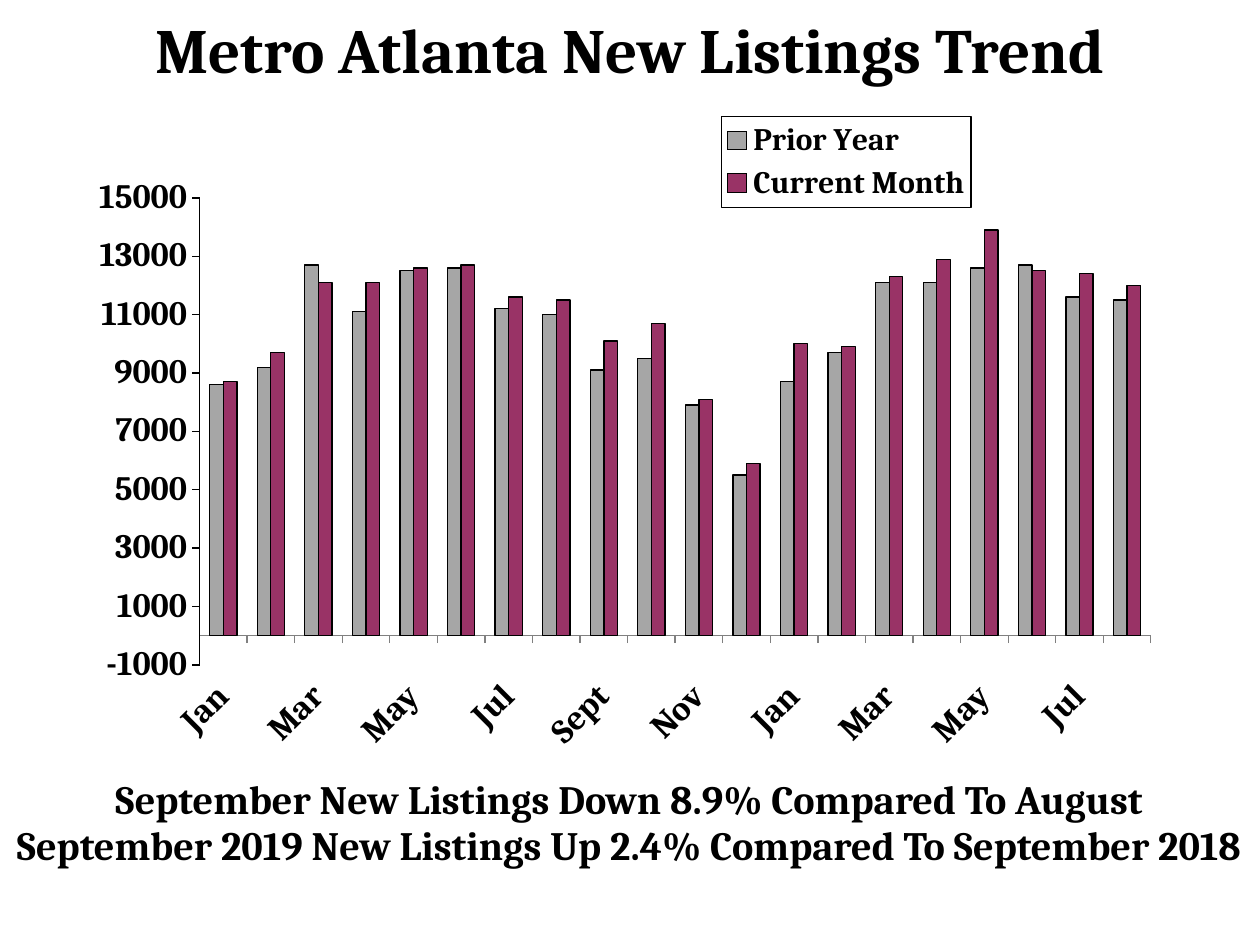
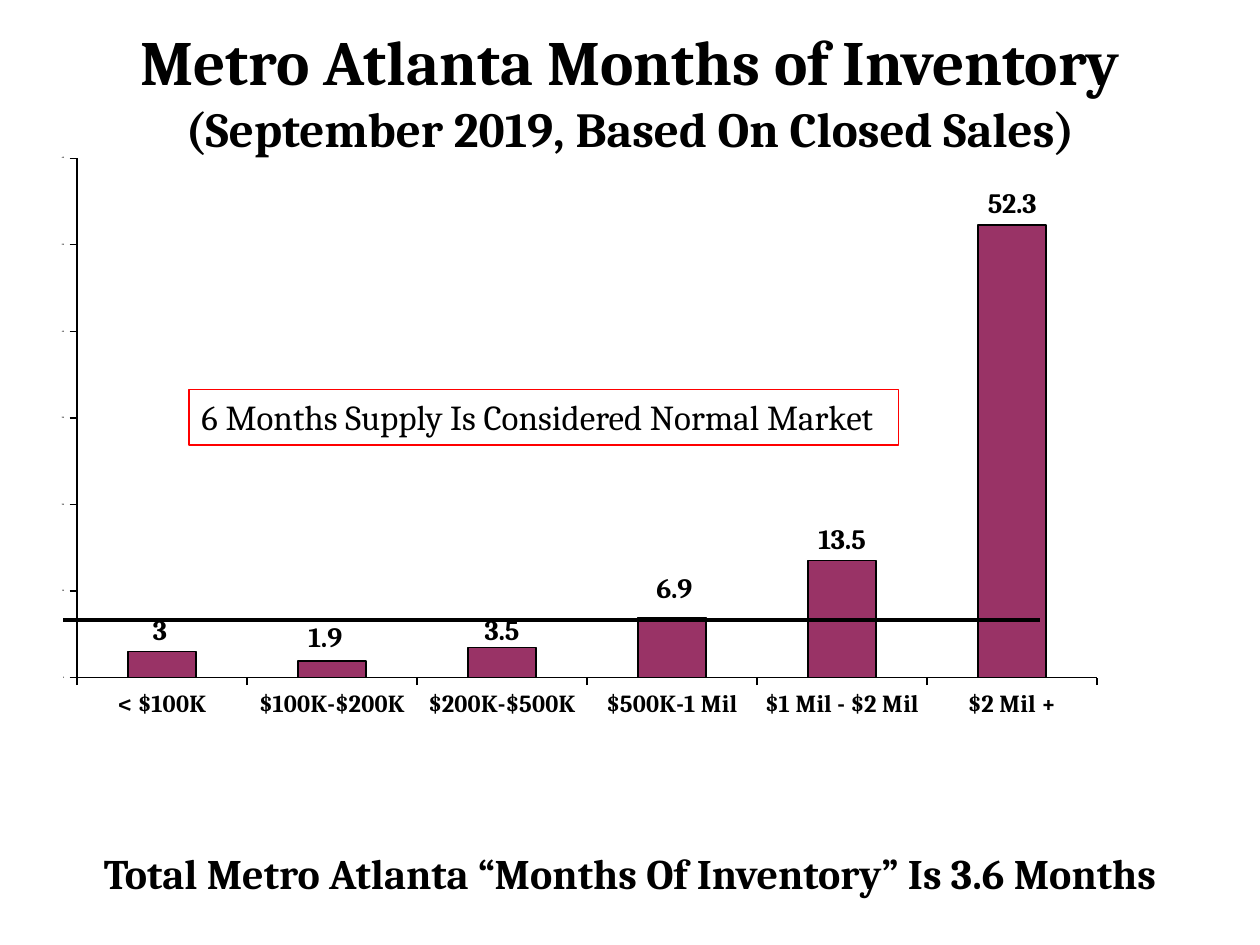
from lxml import etree
from pptx import Presentation
from pptx.chart.data import CategoryChartData
from pptx.dml.color import RGBColor
from pptx.enum.chart import (XL_CHART_TYPE, XL_LABEL_POSITION, XL_LEGEND_POSITION,
                             XL_TICK_LABEL_POSITION, XL_TICK_MARK)
from pptx.enum.shapes import MSO_CONNECTOR, MSO_SHAPE
from pptx.enum.text import MSO_ANCHOR, PP_ALIGN
from pptx.oxml.ns import qn
from pptx.util import Inches, Pt

COLUMNS = XL_CHART_TYPE.COLUMN_CLUSTERED
OUTSIDE_END = XL_LABEL_POSITION.OUTSIDE_END
LEGEND_RIGHT = XL_LEGEND_POSITION.RIGHT
LABELS_LOW = XL_TICK_LABEL_POSITION.LOW
TICK_OUT, TICK_NONE = XL_TICK_MARK.OUTSIDE, XL_TICK_MARK.NONE
TOP, MIDDLE = MSO_ANCHOR.TOP, MSO_ANCHOR.MIDDLE
LEFT, CENTER = PP_ALIGN.LEFT, PP_ALIGN.CENTER

FONT = "Cambria"
BLACK, GRAY, PLUM, RED, AXIS_GRAY = "000000", "A6A6A6", "993366", "FF0000", "808080"
WIDTH, HEIGHT = Inches(10), Inches(7.5)
TITLE_HEIGHT, FOOTER_HEIGHT = 0.056, 0.077

MONTHS = "Jan Feb Mar Apr May Jun Jul Aug Sept Oct Nov Dec".split()
LISTINGS = {
    "Prior Year": (GRAY, [8600, 9200, 12700, 11100, 12500, 12600, 11200, 11000, 9100, 9500,
                          7900, 5500, 8700, 9700, 12100, 12100, 12600, 12700, 11600, 11500]),
    "Current Month": (PLUM, [8700, 9700, 12100, 12100, 12600, 12700, 11600, 11500, 10100, 10700,
                             8100, 5900, 10000, 9900, 12300, 12900, 13900, 12500, 12400, 12000]),
}
PRICES = ["< $100K", "$100K-$200K", "$200K-$500K", "$500K-1 Mil", "$1 Mil - $2 Mil", "$2 Mil +"]
INVENTORY = {"Series 1": (PLUM, [3, 1.9, 3.5, 6.9, 13.5, 52.3])}
LABEL_SHIFTS = [(-0.002, 0), (-0.006, -0.003), (0, 0.007), (0.002, -0.011)]


def rgb(color):
    return RGBColor.from_string(color)


def scale(box):
    """Turn shares of the slide (left, top, width, height) into lengths."""
    return [int(share * side) for share, side in zip(box, (WIDTH, HEIGHT) * 2)]


def set_font(font, size, color=BLACK, bold=True):
    font.name, font.size, font.bold = FONT, Pt(size), bold
    font.color.rgb = rgb(color)


def set_line(line, color=BLACK, width=0.75):
    line.color.rgb, line.width = rgb(color), Pt(width)


def write(sp, paragraphs, sizes, color=BLACK, bold=True, align=CENTER, anchor=TOP,
          spacing=1.0, gap=0, margin_top=0.05):
    """Fill a shape with paragraphs, each a list of lines sized in turn by sizes."""
    tf = sp.text_frame
    tf.word_wrap, tf.vertical_anchor = True, anchor
    tf.margin_top = Inches(margin_top)
    for i, lines in enumerate(paragraphs):
        p = tf.add_paragraph() if i else tf.paragraphs[0]
        p.alignment, p.line_spacing = align, spacing
        p.space_before = Pt(gap if i else 0)
        for j, (text, size) in enumerate(zip(lines, sizes)):
            if j:
                p.add_line_break()
            r = p.add_run()
            r.text = text
            set_font(r.font, size, color, bold)


def add_title(slide, top, lines):
    sp = slide.shapes.add_textbox(*scale((0, top, 1, TITLE_HEIGHT)))
    write(sp, [lines], (36, 28), anchor=MIDDLE)


def add_footer(slide, top, lines, size):
    sp = slide.shapes.add_textbox(*scale((0, top, 1, FOOTER_HEIGHT)))
    write(sp, [[line] for line in lines], [size], spacing=0.9, gap=1.5, margin_top=0.19)


def make_layout(box, inner=False, offset=False):
    """Build a manual chart layout from shares of the chart's size."""
    layout = etree.Element(qn("c:layout"))
    manual = etree.SubElement(layout, qn("c:manualLayout"))
    values = [("layoutTarget", "inner")] if inner else []
    if not offset:
        values += [("xMode", "edge"), ("yMode", "edge")]
    values += zip("xywh", box)
    for tag, value in values:
        etree.SubElement(manual, qn("c:" + tag)).set("val", str(value))
    return layout


def add_column_chart(slide, box, categories, data, plot_box, limits, step, sizes):
    """Draw columns; sizes gives the text size of the category and value axes."""
    chart_data = CategoryChartData()
    chart_data.categories = categories
    for name, (_, values) in data.items():
        chart_data.add_series(name, values)
    chart = slide.shapes.add_chart(COLUMNS, *scale(box), chart_data).chart
    chart.has_title = chart.has_legend = False
    set_font(chart.font, sizes[0])

    plot = chart.plots[0]
    plot.gap_width, plot.overlap, plot.vary_by_categories = 150, 0, False
    for series, (color, _) in zip(plot.series, data.values()):
        series.format.fill.solid()
        series.format.fill.fore_color.rgb = rgb(color)
        set_line(series.format.line)

    for axis, size in zip((chart.category_axis, chart.value_axis), sizes):
        axis.has_major_gridlines = False
        axis.major_tick_mark, axis.minor_tick_mark = TICK_OUT, TICK_NONE
        set_font(axis.tick_labels.font, size)
        set_line(axis.format.line)
    chart.category_axis.tick_label_position = LABELS_LOW
    axis = chart.value_axis
    axis.minimum_scale, axis.maximum_scale = limits
    axis.major_unit = step
    axis.tick_labels.number_format = "General"
    axis.tick_labels.number_format_is_linked = False

    area = chart.element.find(".//" + qn("c:plotArea"))
    for old in area.findall(qn("c:layout")):
        area.remove(old)
    area.insert(0, make_layout(plot_box, inner=True))
    return chart


def slant_month_labels(axis):
    """Turn the labels upward and show every second one."""
    body = axis._element.find(qn("c:txPr")).find(qn("a:bodyPr"))
    body.set("rot", "-2700000")
    body.set("vert", "horz")
    skip = etree.Element(qn("c:tickLblSkip"))
    skip.set("val", "2")
    axis._element.find(qn("c:noMultiLvlLbl")).addprevious(skip)


def add_legend(chart, box, size):
    chart.has_legend = True
    legend = chart.legend
    legend.position, legend.include_in_layout = LEGEND_RIGHT, True
    set_font(legend.font, size)
    element = legend._element
    for old in element.findall(qn("c:layout")):
        element.remove(old)
    element.find(qn("c:legendPos")).addnext(make_layout(box))
    border = etree.Element(qn("c:spPr"))
    line = etree.SubElement(border, qn("a:ln"), w=str(Pt(0.75)))
    fill = etree.SubElement(line, qn("a:solidFill"))
    etree.SubElement(fill, qn("a:srgbClr"), val=BLACK)
    element.find(qn("c:txPr")).addprevious(border)


def label_columns(series, size, shifts):
    """Show values above the columns, nudging the first ones by shifts."""
    labels = series.data_labels
    labels.show_value, labels.position = True, OUTSIDE_END
    set_font(labels.font, size)
    for i in range(len(shifts)):
        label = series.points[i].data_label
        set_font(label.font, size)
        label.position = OUTSIDE_END
    for element, shift in zip(series._element.iter(qn("c:dLbl")), shifts):
        element.find(qn("c:idx")).addnext(make_layout(shift, offset=True))


def add_normal_line(slide, left, right, y):
    x1, y1, x2, y2 = scale((left, y, right, y))
    line = slide.shapes.add_connector(MSO_CONNECTOR.STRAIGHT, x1, y1, x2, y2)
    set_line(line.line, width=2.25)
    etree.SubElement(line._element.spPr, qn("a:effectLst"))


def add_callout(slide, box, text):
    sp = slide.shapes.add_shape(MSO_SHAPE.RECTANGLE, *scale(box))
    sp.shadow.inherit = False
    sp.fill.background()
    set_line(sp.line, RED)
    write(sp, [[text]], [20], bold=False, align=LEFT)


def build_listings(slide):
    chart = add_column_chart(slide, (0.062, 0.111, 0.876, 0.704), MONTHS + MONTHS[:8], LISTINGS,
                             (0.11, 0.14, 0.862, 0.702), (-1000, 15000), 2000, (19.5, 19.5))
    set_line(chart.category_axis.format.line, AXIS_GRAY)
    slant_month_labels(chart.category_axis)
    add_legend(chart, (0.583, 0.017, 0.226, 0.137), 17.9)
    add_title(slide, 0.023, ["Metro Atlanta New Listings Trend"])
    add_footer(slide, 0.8, ["September New Listings Down 8.9% Compared To August",
                            "September 2019 New Listings Up 2.4% Compared To September 2018"], 23)


def build_inventory(slide):
    chart = add_column_chart(slide, (0.049, 0.163, 0.903, 0.755), PRICES, INVENTORY,
                             (0.013, 0.006, 0.897, 0.728), (0, 60), 10, (14, 1.2))
    label_columns(chart.plots[0].series[0], 16, LABEL_SHIFTS)
    add_normal_line(slide, 0.05, 0.825, 0.656)
    add_title(slide, 0.067, ["Metro Atlanta Months of Inventory",
                             "(September 2019, Based On Closed Sales)"])
    add_footer(slide, 0.877, ["Total Metro Atlanta “Months Of Inventory” Is 3.6 Months"], 24)
    add_callout(slide, (0.15, 0.412, 0.563, 0.059), "6 Months Supply Is Considered Normal Market")


def main():
    prs = Presentation()
    prs.slide_width, prs.slide_height = WIDTH, HEIGHT
    for build in (build_listings, build_inventory):
        build(prs.slides.add_slide(prs.slide_layouts[6]))
    prs.save("out.pptx")


if __name__ == "__main__":
    main()
